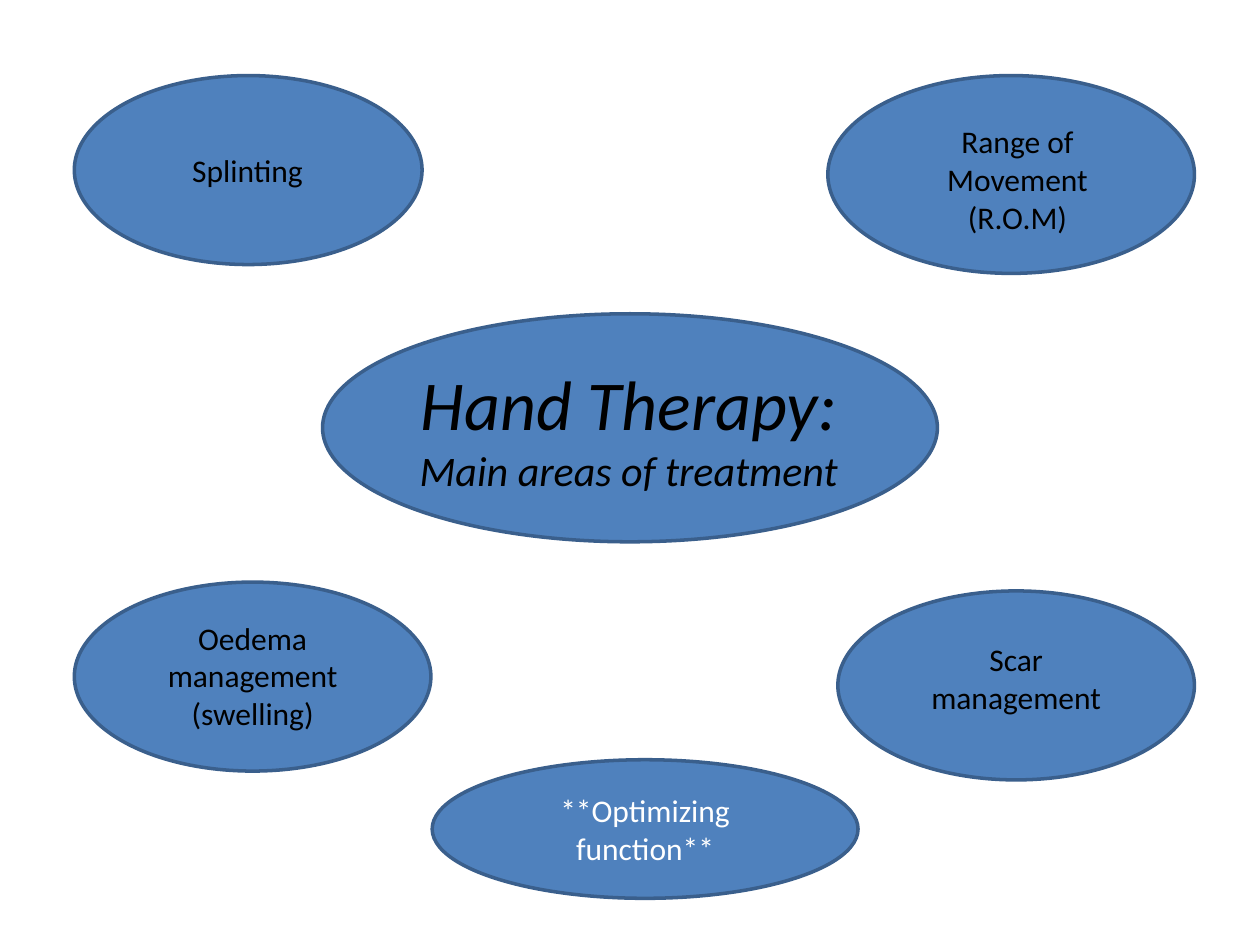
"""Build the hand therapy overview: a central topic ringed by treatment areas."""
from dataclasses import dataclass

import pptx
import pptx.dml.color
import pptx.enum.shapes
import pptx.enum.text
import pptx.util
from pptx.util import Inches


@dataclass(frozen=True)
class Theme:
    font: str = "Calibri"
    fill: str = "4F81BD"
    line: str = "3A5F8C"
    dark: str = "000000"
    light: str = "FFFFFF"
    title: int = 40
    subtitle: int = 24
    body: int = 18
    outline: int = 2


@dataclass(frozen=True)
class Box:
    left: float
    top: float
    width: float
    height: float

    def lengths(self) -> tuple:
        return tuple(Inches(v) for v in (self.left, self.top, self.width, self.height))


@dataclass(frozen=True)
class Area:
    oval: Box
    label: Box
    lines: tuple[str, ...]


THEME = Theme()
ANCHOR = pptx.enum.text.MSO_ANCHOR

TOPIC_OVAL = Box(2.56, 2.49, 4.88, 1.81)
TOPIC_LABEL = Box(3.18, 2.81, 3.62, 1.18)
GOAL_OVAL = Box(3.43, 6.03, 3.38, 1.1)
AREAS = (
    Area(Box(0.59, 0.6, 2.76, 1.5), Box(1.06, 1.15, 1.81, 0.4), ("Splinting",)),
    Area(Box(6.57, 0.6, 2.91, 1.57), Box(7.05, 0.92, 2.05, 1.01),
         ("Range of Movement", "(R.O.M)")),
    Area(Box(0.59, 4.62, 2.83, 1.5), Box(1.06, 4.86, 1.89, 1.01),
         ("Oedema management", "(swelling)")),
    Area(Box(6.65, 4.69, 2.83, 1.5), Box(7.2, 5.03, 1.73, 0.71), ("Scar management",)),
)


def rgb(value: str) -> pptx.dml.color.RGBColor:
    return pptx.dml.color.RGBColor.from_string(value)


def write(p, text: str, *, size: int = THEME.body, color: str = THEME.dark,
          italic: bool = False) -> None:
    p.alignment = pptx.enum.text.PP_ALIGN.CENTER
    r = p.add_run()
    r.text = text
    r.font.name = THEME.font
    r.font.size = pptx.util.Pt(size)
    r.font.italic = italic
    r.font.color.rgb = rgb(color)


def prepare(sp, anchor):
    tf = sp.text_frame
    tf.word_wrap = True
    tf.auto_size = pptx.enum.text.MSO_AUTO_SIZE.NONE
    tf.vertical_anchor = anchor
    return tf


def add_oval(s, box: Box):
    sp = s.shapes.add_shape(pptx.enum.shapes.MSO_SHAPE.OVAL, *box.lengths())
    sp.shadow.inherit = False
    sp.fill.solid()
    sp.fill.fore_color.rgb = rgb(THEME.fill)
    sp.line.color.rgb = rgb(THEME.line)
    sp.line.width = pptx.util.Pt(THEME.outline)
    return sp


def add_topic(s) -> None:
    oval = add_oval(s, TOPIC_OVAL)
    title = s.shapes.title
    title.left, title.top, title.width, title.height = TOPIC_LABEL.lengths()
    oval.element.addnext(title.element)
    tf = prepare(title, ANCHOR.TOP)
    write(tf.paragraphs[0], "Hand Therapy:", size=THEME.title, italic=True)
    write(tf.add_paragraph(), "Main areas of treatment", size=THEME.subtitle, italic=True)


def add_area(s, area: Area) -> None:
    add_oval(s, area.oval)
    tf = prepare(s.shapes.add_textbox(*area.label.lengths()), ANCHOR.TOP)
    for i, text in enumerate(area.lines):
        write(tf.add_paragraph() if i else tf.paragraphs[0], text)


def add_goal(s) -> None:
    tf = prepare(add_oval(s, GOAL_OVAL), ANCHOR.MIDDLE)
    write(tf.paragraphs[0], "**Optimizing function**", color=THEME.light)


def main() -> None:
    prs = pptx.Presentation()
    prs.slide_width, prs.slide_height = Inches(10), Inches(7.5)
    s = prs.slides.add_slide(prs.slide_layouts.get_by_name("Title Only"))
    add_topic(s)
    for area in AREAS:
        add_area(s, area)
    add_goal(s)
    prs.save("out.pptx")


if __name__ == "__main__":
    main()
